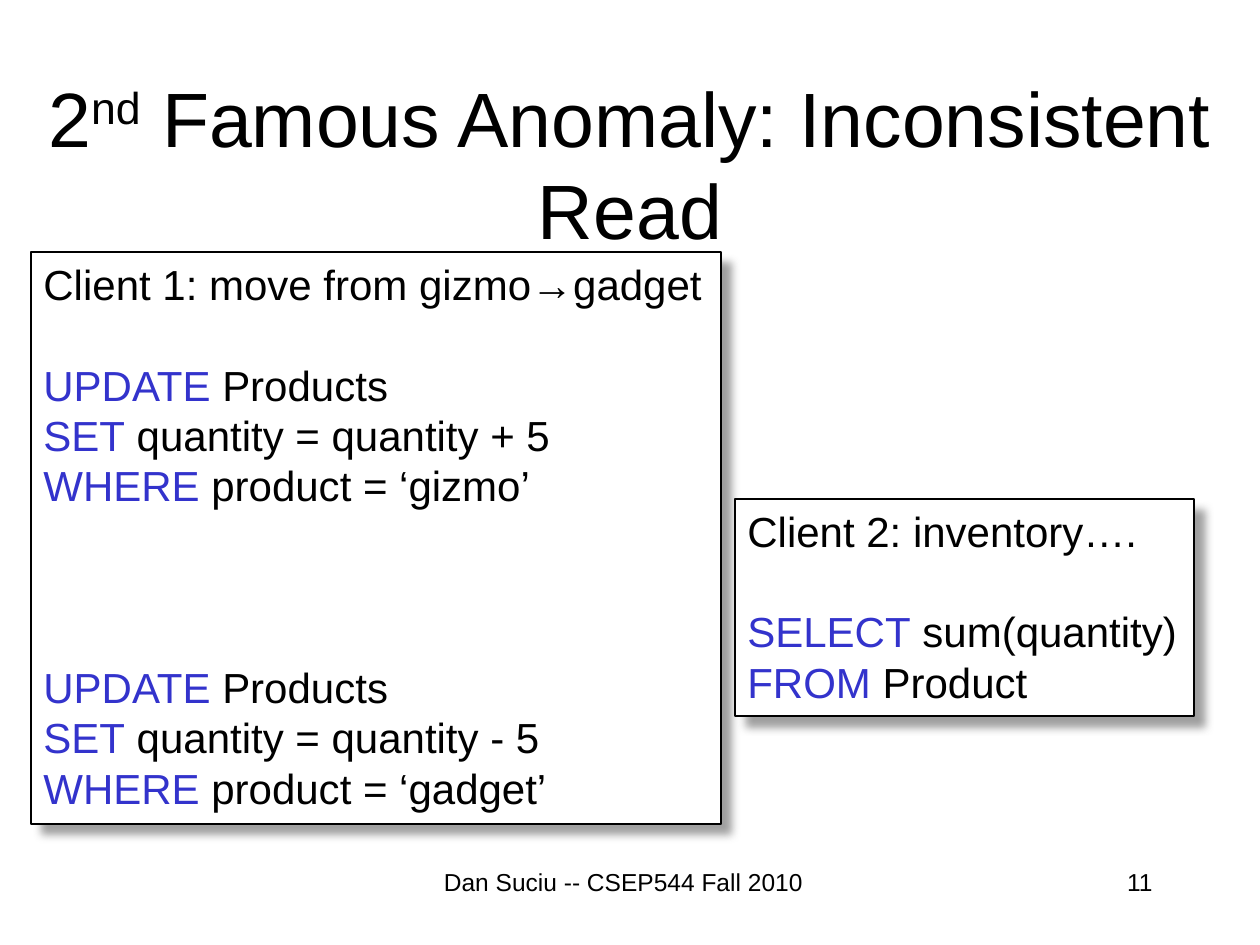
from dataclasses import dataclass

from lxml import etree
from pptx import Presentation
from pptx.dml.color import RGBColor
from pptx.enum.shapes import MSO_SHAPE
from pptx.enum.text import MSO_ANCHOR, MSO_AUTO_SIZE, PP_ALIGN
from pptx.oxml.ns import qn
from pptx.util import Emu, Pt

RECT = MSO_SHAPE.RECTANGLE
TOP, MIDDLE = MSO_ANCHOR.TOP, MSO_ANCHOR.MIDDLE
FIT = MSO_AUTO_SIZE.SHAPE_TO_FIT_TEXT
LEFT, CENTER, RIGHT = PP_ALIGN.LEFT, PP_ALIGN.CENTER, PP_ALIGN.RIGHT

BLACK = RGBColor(0x00, 0x00, 0x00)
WHITE = RGBColor(0xFF, 0xFF, 0xFF)
BLUE = RGBColor(0x33, 0x33, 0xCC)
GRAY = RGBColor(0x80, 0x80, 0x80)

SCALE = 914400 // 126
FONT = "Arial"
LINE = 28.8


@dataclass
class Box:
    x: int
    y: int
    w: int
    h: int

    def emu(self) -> list[Emu]:
        return [Emu(n * SCALE) for n in (self.x, self.y, self.w, self.h)]


@dataclass
class Client:
    box: Box
    head: str
    blocks: list[tuple[int, list[str]]]


CLIENTS = [
    Client(Box(31, 252, 690, 572), "Client 1: move from gizmo→gadget", [
        (1, ["UPDATE Products", "SET quantity = quantity + 5",
             "WHERE product = ‘gizmo’"]),
        (3, ["UPDATE Products", "SET quantity = quantity - 5",
             "WHERE product = ‘gadget’"]),
    ]),
    Client(Box(735, 499, 459, 217), "Client 2: inventory….", [
        (1, ["SELECT sum(quantity)", "FROM Product"]),
    ]),
]


def write(para, text: str, size: int = 24, color: RGBColor = BLACK,
          align: PP_ALIGN = LEFT, base: int = 0) -> None:
    para.alignment = align
    run = para.add_run()
    run.text = text
    font = run.font
    font.name, font.size, font.color.rgb = FONT, Pt(size), color
    if base:
        run._r.get_or_add_rPr().set("baseline", str(base * 1000))


def label(slide, box: Box, anchor: MSO_ANCHOR = TOP):
    frame = slide.shapes.add_textbox(*box.emu()).text_frame
    frame.word_wrap = True
    frame.vertical_anchor = anchor
    return frame.paragraphs[0]


def shade(shape) -> None:
    shape.shadow.inherit = False
    effects = shape._element.spPr.find(qn("a:effectLst"))
    outer = etree.SubElement(
        effects, qn("a:outerShdw"), blurRad=str(Pt(5)), dist=str(Pt(8.5)),
        dir=str(45 * 60000), algn="tl", rotWithShape="0")
    color = etree.SubElement(outer, qn("a:srgbClr"), val=str(GRAY))
    etree.SubElement(color, qn("a:alpha"), val="75000")


def draw(slide, client: Client) -> None:
    shape = slide.shapes.add_shape(RECT, *client.box.emu())
    shape.fill.solid()
    shape.fill.fore_color.rgb = WHITE
    shape.line.color.rgb = BLACK
    shape.line.width = Pt(0.75)
    shade(shape)
    frame = shape.text_frame
    frame.word_wrap = False
    frame.auto_size = FIT
    frame.vertical_anchor = TOP
    write(frame.paragraphs[0], client.head)
    for gap, lines in client.blocks:
        for row, line in enumerate(lines):
            para = frame.add_paragraph()
            if row == 0:
                para.space_before = Pt(gap * LINE)
            key, rest = line.split(" ", 1)
            write(para, key, color=BLUE)
            write(para, " " + rest)


def main() -> None:
    deck = Presentation()
    deck.slide_width, deck.slide_height = Emu(1260 * SCALE), Emu(945 * SCALE)
    slide = deck.slides.add_slide(deck.slide_layouts[6])

    title = label(slide, Box(0, 84, 1260, 158), MIDDLE)
    for text, base in (("2", 0), ("nd", 30),
                       (" Famous Anomaly: Inconsistent Read", 0)):
        write(title, text, size=44, align=CENTER, base=base)

    for client in CLIENTS:
        draw(slide, client)

    write(label(slide, Box(424, 861, 399, 63)),
          "Dan Suciu -- CSEP544 Fall 2010", size=14, align=CENTER)
    write(label(slide, Box(903, 861, 262, 63)), "11", size=14, align=RIGHT)
    deck.save("out.pptx")


if __name__ == "__main__":
    main()
